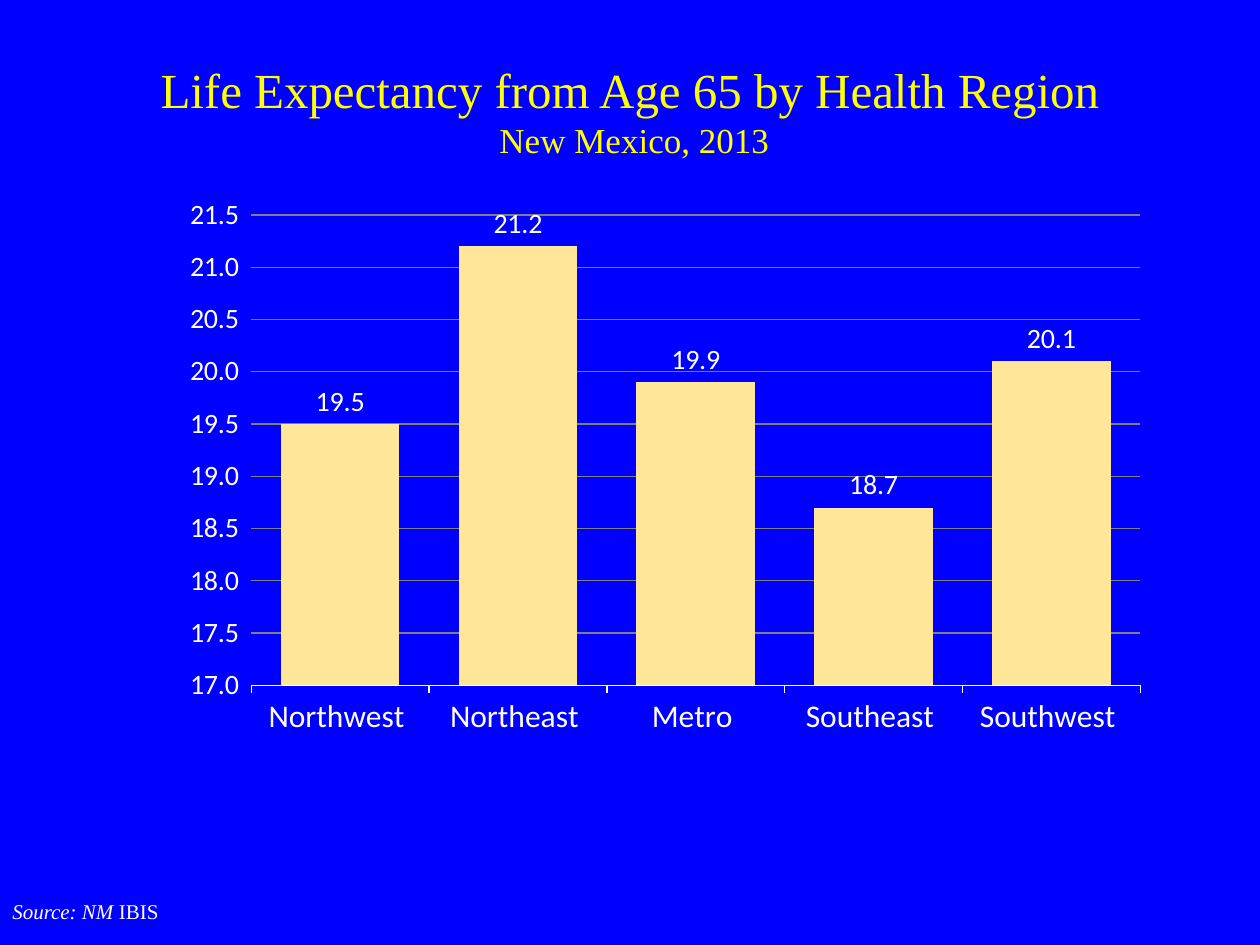
import pptx
import pptx.chart.data
import pptx.dml.color
import pptx.enum.chart
import pptx.enum.text
import pptx.util
from lxml import etree
from pptx.util import Inches, Pt

COLORS = {"background": "0000FF", "title": "FFFF00", "text": "FFFFFF",
          "bar": "FFE699", "grid": "808080"}
SERIF, SANS = "Times New Roman", "Calibri"

TITLE = [("Life Expectancy from Age 65 by Health Region", 28),
         (" New Mexico, 2013", 20)]
SOURCE = [("Source: NM ", True), ("IBIS", False)]
LIFE_EXPECTANCY = {"Northwest ": 19.5, "Northeast ": 21.2, "Metro ": 19.9,
                   "Southeast ": 18.7, "Southwest ": 20.1}
PLOT = {"x": 0.175, "y": 0.042, "w": 0.784, "h": 0.759}


def rgb(name):
    return pptx.dml.color.RGBColor.from_string(COLORS[name])


def set_font(font, name, size, color):
    font.name, font.size = name, Pt(size)
    font.color.rgb = rgb(color)


def set_line(line, color):
    line.color.rgb = rgb(color)
    line.width = Pt(0.75)


def add_text(slide, left, top, width, height):
    tf = slide.shapes.add_textbox(*map(Inches, (left, top, width, height))).text_frame
    tf.word_wrap = True
    return tf


def set_inner_plot(chart):
    """Fix the plot area, without its axis labels, at fractions of the chart."""
    plot_area = chart.plots[0]._element.getparent()
    ns = "{%s}" % plot_area.nsmap["c"]
    for old in plot_area.findall(ns + "layout"):
        plot_area.remove(old)
    layout = etree.Element(ns + "layout")
    plot_area.insert(0, layout)
    manual = etree.SubElement(layout, ns + "manualLayout")
    settings = [("layoutTarget", "inner"), ("xMode", "edge"), ("yMode", "edge")]
    for tag, value in settings + list(PLOT.items()):
        etree.SubElement(manual, ns + tag).set("val", str(value))


def add_title(slide):
    tf = add_text(slide, 0.75, 0.25, 8.5, 1.25)
    tf.vertical_anchor = pptx.enum.text.MSO_ANCHOR.MIDDLE
    p = tf.paragraphs[0]
    p.alignment = pptx.enum.text.PP_ALIGN.CENTER
    for i, (text, size) in enumerate(TITLE):
        if i:
            p.add_line_break()
        r = p.add_run()
        r.text = text
        set_font(r.font, SERIF, size, "title")


def add_life_chart(slide):
    enums = pptx.enum.chart
    data = pptx.chart.data.CategoryChartData(number_format="0.0")
    data.categories = list(LIFE_EXPECTANCY)
    data.add_series("Series 1", list(LIFE_EXPECTANCY.values()))
    chart = slide.shapes.add_chart(
        enums.XL_CHART_TYPE.COLUMN_CLUSTERED,
        Inches(0.42), Inches(1.5), Inches(9), Inches(4.92), data).chart
    chart.has_title = chart.has_legend = False
    set_font(chart.font, SERIF, 10, "text")

    plot = chart.plots[0]
    plot.gap_width, plot.overlap, plot.vary_by_categories = 50, -27, False
    fill = plot.series[0].format.fill
    fill.solid()
    fill.fore_color.rgb = rgb("bar")
    labels = plot.series[0].data_labels
    labels.show_value = True
    labels.position = enums.XL_LABEL_POSITION.OUTSIDE_END
    set_font(labels.font, SANS, 16, "text")

    regions, years = chart.category_axis, chart.value_axis
    for axis, size in ((regions, 18), (years, 16)):
        axis.major_tick_mark = enums.XL_TICK_MARK.OUTSIDE
        axis.minor_tick_mark = enums.XL_TICK_MARK.NONE
        set_font(axis.tick_labels.font, SANS, size, "text")
    set_line(regions.format.line, "text")
    years.minimum_scale, years.maximum_scale, years.major_unit = 17, 21.5, 0.5
    years.tick_labels.number_format = "0.0"
    years.tick_labels.number_format_is_linked = False
    years.format.line.fill.background()
    years.has_major_gridlines = True
    set_line(years.major_gridlines.format.line, "grid")
    set_inner_plot(chart)


def add_source(slide):
    p = add_text(slide, 0, 7.08, 7.5, 0.3).paragraphs[0]
    set_font(p.font, SERIF, 12, "text")
    for text, italic in SOURCE:
        r = p.add_run()
        r.text, r.font.italic = text, italic


def main():
    prs = pptx.Presentation()
    prs.slide_width, prs.slide_height = Inches(10), Inches(7.5)
    s = prs.slides.add_slide(prs.slide_layouts[6])
    s.background.fill.solid()
    s.background.fill.fore_color.rgb = rgb("background")
    add_title(s)
    add_life_chart(s)
    add_source(s)
    prs.save("out.pptx")


if __name__ == "__main__":
    main()
